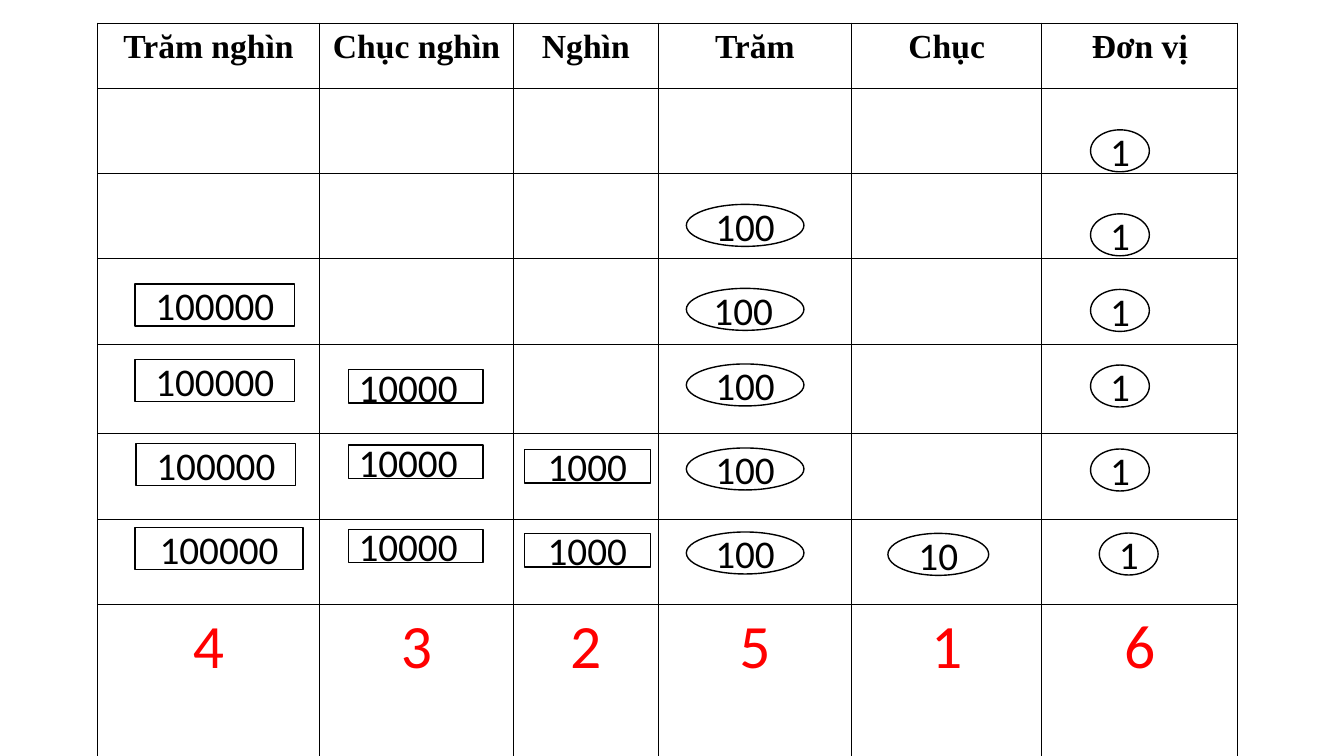
from dataclasses import dataclass

from lxml.etree import SubElement
from pptx import Presentation
from pptx.dml.color import RGBColor
from pptx.enum.shapes import MSO_SHAPE
from pptx.enum.text import MSO_ANCHOR, PP_ALIGN
from pptx.oxml.ns import qn
from pptx.slide import Slide
from pptx.table import _Cell
from pptx.text.text import TextFrame
from pptx.util import Pt

BLACK = "000000"
WHITE = "FFFFFF"
RED = "FF0000"


@dataclass(frozen=True)
class TextStyle:
    size: float
    color: str
    font: str = "Calibri"
    bold: bool = False


@dataclass(frozen=True)
class Column:
    heading: str
    digit: str
    width: float


@dataclass(frozen=True)
class Token:
    label: str
    outline: MSO_SHAPE
    left: float
    top: float
    width: float
    height: float = 30
    alignment: PP_ALIGN = PP_ALIGN.CENTER


HEADING_STYLE = TextStyle(24, BLACK, "Times New Roman", True)
DIGIT_STYLE = TextStyle(44, RED)
TOKEN_STYLE = TextStyle(28, BLACK)

TABLE_LEFT = 69.75
TABLE_TOP = 16.5
COLUMNS = [
    Column("Trăm nghìn", "4", 158.5),
    Column("Chục nghìn", "3", 138.5),
    Column("Nghìn", "2", 103.5),
    Column("Trăm", "5", 138),
    Column("Chục", "1", 136),
    Column("Đơn vị", "6", 140),
]
ROW_HEIGHTS = [46.5, 61, 61, 61, 64, 61, 61, 112]

OVAL = MSO_SHAPE.OVAL
BOX = MSO_SHAPE.RECTANGLE
LEFT = PP_ALIGN.LEFT
TOKENS = [
    *(Token("1", OVAL, 779, top, 42) for top in (92.75, 152.75, 206.75, 260.75, 320.75)),
    Token("1", OVAL, 785.25, 380.75, 42),
    *(Token("100", OVAL, 490.25, top, 84) for top in (146, 260, 320, 380)),
    Token("100", OVAL, 490.25, 206, 84, alignment=LEFT),
    Token("10", OVAL, 634.25, 381, 72),
    *(Token("1000", BOX, 374.5, top, 90, 24) for top in (321, 381)),
    *(Token("10000", BOX, 249, top, 96, 24, LEFT) for top in (264, 318, 378)),
    *(Token("100000", BOX, 96.5, top, 114) for top in (203, 257)),
    Token("100000", BOX, 97.25, 317, 114),
    Token("100000", BOX, 96.5, 376.75, 120),
]


def color_of(value: str) -> RGBColor:
    return RGBColor.from_string(value)


def write_text(frame: TextFrame, text: str, style: TextStyle, alignment: PP_ALIGN) -> None:
    paragraph = frame.paragraphs[0]
    paragraph.alignment = alignment
    run = paragraph.add_run()
    run.text = text
    run.font.size = Pt(style.size)
    run.font.name = style.font
    run.font.bold = style.bold
    run.font.color.rgb = color_of(style.color)


def add_borders(cell: _Cell) -> None:
    properties = cell._tc.get_or_add_tcPr()
    for position, side in enumerate(("a:lnL", "a:lnR", "a:lnT", "a:lnB")):
        line = SubElement(properties, qn(side), w=str(Pt(1)))
        fill = SubElement(line, qn("a:solidFill"))
        SubElement(fill, qn("a:srgbClr"), val=BLACK)
        properties.insert(position, line)


def add_place_value_table(slide: Slide) -> None:
    width = sum(column.width for column in COLUMNS)
    table = slide.shapes.add_table(
        len(ROW_HEIGHTS), len(COLUMNS),
        Pt(TABLE_LEFT), Pt(TABLE_TOP), Pt(width), Pt(sum(ROW_HEIGHTS)),
    ).table
    table.first_row = False
    table.horz_banding = False
    for row, height in zip(table.rows, ROW_HEIGHTS):
        row.height = Pt(height)
    for cell in table.iter_cells():
        cell.fill.background()
        add_borders(cell)
    last_row = len(ROW_HEIGHTS) - 1
    for index, column in enumerate(COLUMNS):
        table.columns[index].width = Pt(column.width)
        write_text(table.cell(0, index).text_frame, column.heading, HEADING_STYLE, PP_ALIGN.CENTER)
        write_text(table.cell(last_row, index).text_frame, column.digit, DIGIT_STYLE, PP_ALIGN.CENTER)


def add_token(slide: Slide, token: Token) -> None:
    shape = slide.shapes.add_shape(
        token.outline, Pt(token.left), Pt(token.top), Pt(token.width), Pt(token.height)
    )
    shape.shadow.inherit = False
    shape.fill.solid()
    shape.fill.fore_color.rgb = color_of(WHITE)
    shape.line.color.rgb = color_of(BLACK)
    shape.line.width = Pt(1)
    shape.text_frame.word_wrap = True
    shape.text_frame.vertical_anchor = MSO_ANCHOR.MIDDLE
    write_text(shape.text_frame, token.label, TOKEN_STYLE, token.alignment)


def main() -> None:
    presentation = Presentation()
    presentation.slide_width = Pt(960)
    presentation.slide_height = Pt(540)
    slide = presentation.slides.add_slide(presentation.slide_layouts[6])
    add_place_value_table(slide)
    for token in TOKENS:
        add_token(slide, token)
    presentation.save("out.pptx")


if __name__ == "__main__":
    main()
